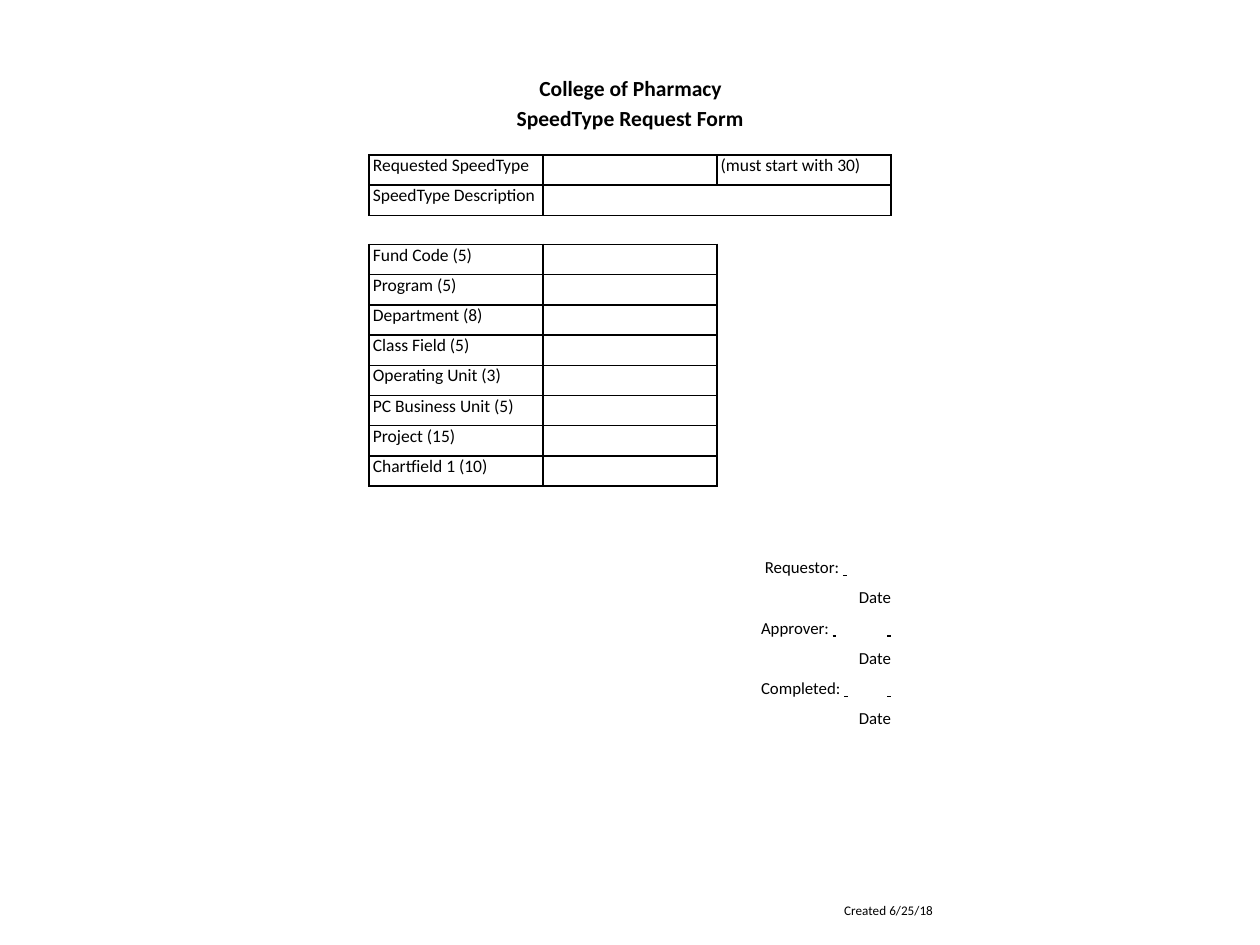
"""Build the SpeedType request form slide."""
from dataclasses import dataclass

from lxml import etree
from pptx import Presentation
from pptx.dml.color import RGBColor
from pptx.enum.text import MSO_ANCHOR, MSO_AUTO_SIZE, PP_ALIGN
from pptx.oxml.ns import qn
from pptx.util import Inches, Pt

LEFT, RIGHT = PP_ALIGN.LEFT, PP_ALIGN.RIGHT
TOP = MSO_ANCHOR.TOP
GROW = MSO_AUTO_SIZE.SHAPE_TO_FIT_TEXT
BLACK = RGBColor(0, 0, 0)
FONT = "Calibri"
COL, ROW, GRID_X = 1.38, 0.24, 2.93
CELL_SIZE, SIGN_SIZE = 10, 9.6


@dataclass
class Piece:
    text: str
    line: bool = False
    space: float = 0


@dataclass
class Para:
    pieces: list[Piece]
    margin: float = 0
    indent: float = 0
    tab: float = 0
    spacing: float = 1
    before: float = 0
    align: PP_ALIGN = LEFT


@dataclass
class Grid:
    top: float
    rows: list[list[str]]


BLANK = Piece(" \t", line=True)
TAIL = Piece(" ", line=True, space=-1.6)
SIGNS = [
    Para([Piece("Requestor: "), BLANK], tab=3.37, align=RIGHT),
    Para([Piece("Date Approver: "), BLANK, TAIL], 0.1, 3.04, 3.41, 1.5, align=RIGHT),
    Para([Piece("Date Completed: "), BLANK, TAIL], 0.01, 3.13, 3.41, 1.5, align=RIGHT),
    Para([Piece("Date")], before=5.7, align=RIGHT),
]
HEAD = Para([Piece("College of Pharmacy SpeedType Request Form")], 0.01, 0.18, spacing=1.17)
NOTE = Para([Piece("Created 6/25/18")], 0.01)
SPEED = Grid(1.23, [
    ["Requested SpeedType", "", "(must start with 30)"],
    ["SpeedType Description", "", ""],
])
FIELDS = [
    "Fund Code (5)", "Program (5)", "Department (8)", "Class Field (5)",
    "Operating Unit (3)", "PC Business Unit (5)", "Project (15)", "Chartfield 1 (10)",
]
CODES = Grid(1.94, [[name, ""] for name in FIELDS])


def write(target, para: Para, size: float, bold: bool = False) -> None:
    props = target._p.get_or_add_pPr()
    props.set("marL", str(Inches(para.margin)))
    props.set("indent", str(Inches(para.indent)))
    if para.tab:
        tabs = etree.SubElement(props, qn("a:tabLst"))
        etree.SubElement(tabs, qn("a:tab"), pos=str(Inches(para.tab)), algn="l")
    target.alignment = para.align
    target.line_spacing = para.spacing
    target.space_before = Pt(para.before)
    for piece in para.pieces:
        run = target.add_run()
        run.text = piece.text
        font = run.font
        font.name, font.size, font.bold = FONT, Pt(size), bold
        font.color.rgb = BLACK
        if piece.line:
            font.underline = True
        if piece.space:
            run._r.get_or_add_rPr().set("spc", str(round(piece.space * 100)))


def fill_box(shape, place: tuple, paras: list[Para], size: float, bold: bool = False) -> None:
    shape.left, shape.top, shape.width, shape.height = map(Inches, place)
    frame = shape.text_frame
    frame.margin_left = frame.margin_right = frame.margin_top = frame.margin_bottom = 0
    frame.word_wrap = True
    frame.auto_size = GROW
    frame.vertical_anchor = TOP
    for i, para in enumerate(paras):
        write(frame.add_paragraph() if i else frame.paragraphs[0], para, size, bold)


def add_box(slide, place: tuple, paras: list[Para], size: float) -> None:
    fill_box(slide.shapes.add_textbox(*map(Inches, place)), place, paras, size)


def rule_cell(cell) -> None:
    props = cell._tc.get_or_add_tcPr()
    for side in ("lnL", "lnR", "lnT", "lnB"):
        edge = etree.SubElement(props, qn(f"a:{side}"), w=str(Pt(0.96)))
        paint = etree.SubElement(edge, qn("a:solidFill"))
        etree.SubElement(paint, qn("a:srgbClr"), val=str(BLACK))
    cell.fill.background()


def add_grid(slide, grid: Grid):
    high, wide = len(grid.rows), len(grid.rows[0])
    place = (GRID_X, grid.top, COL * wide, ROW * high)
    table = slide.shapes.add_table(high, wide, *map(Inches, place)).table
    table.first_row = table.horz_banding = False
    for col in table.columns:
        col.width = Inches(COL)
    for row, texts in zip(table.rows, grid.rows):
        row.height = Inches(ROW)
        for cell, text in zip(row.cells, texts):
            cell.margin_left = cell.margin_right = cell.margin_top = cell.margin_bottom = 0
            cell.vertical_anchor = TOP
            rule_cell(cell)
            para = cell.text_frame.paragraphs[0]
            if text:
                write(para, Para([Piece(text)], 0.03), CELL_SIZE)
            else:
                etree.SubElement(para._p, qn("a:endParaRPr"), sz=str(CELL_SIZE * 100))
    return table


def main() -> None:
    deck = Presentation()
    deck.slide_width, deck.slide_height = Inches(10), Inches(7.5)
    slide = deck.slides.add_slide(deck.slide_layouts[5])
    fill_box(slide.shapes.title, (4.09, 0.56, 1.83, 0.48), [HEAD], 12.3, True)
    add_box(slide, (6.69, 7.16, 0.73, 0.13), [NOTE], 7.5)
    speed = add_grid(slide, SPEED)
    speed.cell(1, 1).merge(speed.cell(1, 2))
    add_box(slide, (3.65, 4.42, 3.42, 1.37), SIGNS, SIGN_SIZE)
    add_grid(slide, CODES)
    deck.save("out.pptx")


if __name__ == "__main__":
    main()
